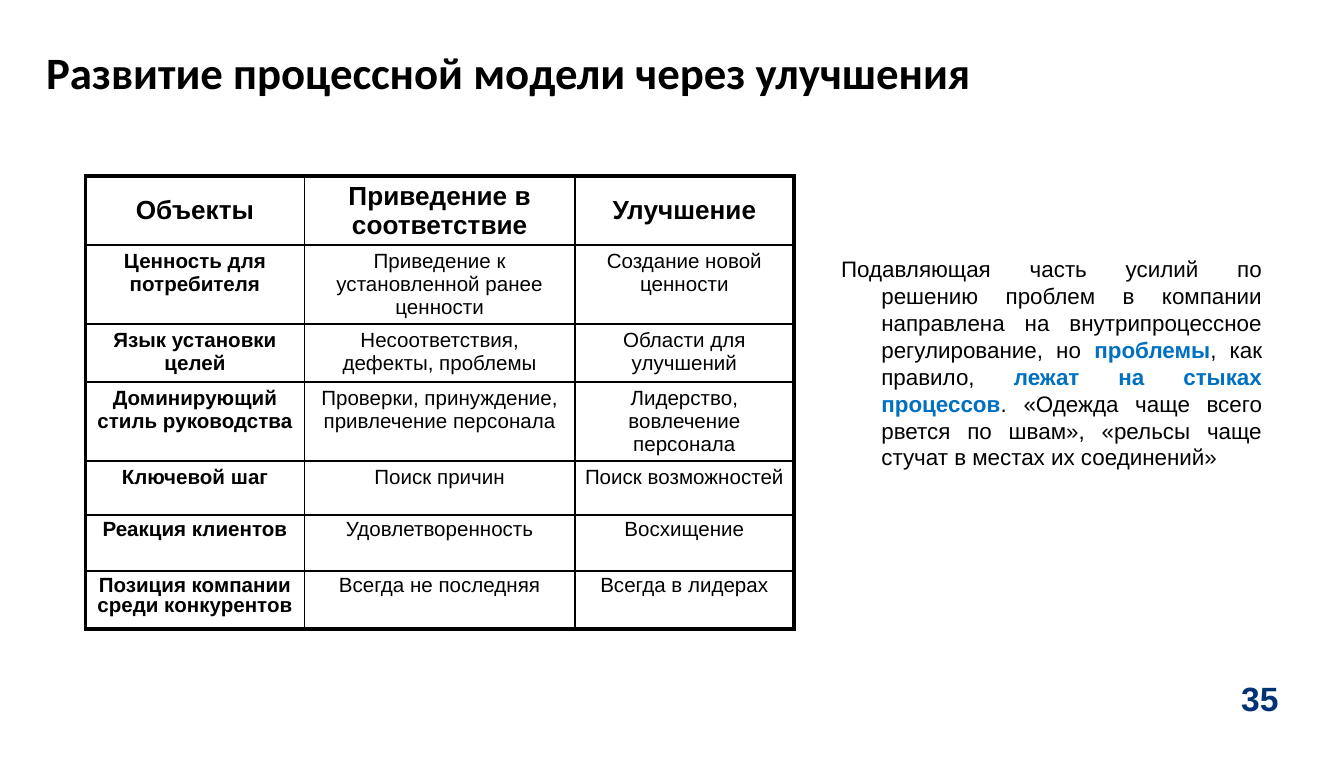
from lxml import etree
from pptx import Presentation
from pptx.dml.color import RGBColor
from pptx.enum import text as t
from pptx.oxml import ns
from pptx.util import Pt

TITLE = "Развитие процессной модели через улучшения"
ROWS = [
    ("Объекты", "Приведение в соответствие", "Улучшение"),
    ("Ценность для потребителя", "Приведение к установленной ранее ценности",
     "Создание новой ценности"),
    ("Язык установки целей", "Несоответствия, дефекты, проблемы", "Области для улучшений"),
    ("Доминирующий стиль руководства", "Проверки, принуждение, привлечение персонала",
     "Лидерство, вовлечение персонала"),
    ("Ключевой шаг", "Поиск причин", "Поиск возможностей"),
    ("Реакция клиентов", "Удовлетворенность", "Восхищение"),
    ("Позиция компании среди конкурентов", "Всегда не последняя", "Всегда в лидерах"),
]
WIDTHS = [117.3, 144.9, 117.3]
HEIGHTS = [37, 42.3, 31, 42, 29.2, 29.7, 31.3]
SPACINGS = [1, 1, 1, 1, 1, 0.9, 0.9]
COMMENT = [
    ("Подавляющая часть усилий по решению проблем в компании направлена "
     "на внутрипроцессное регулирование, но ", False),
    ("проблемы", True),
    (", как правило, ", False),
    ("лежат на стыках процессов", True),
    (". «Одежда чаще всего рвется по швам», «рельсы чаще стучат в местах их соединений»", False),
]
PAGE_NUMBER = "35"
BLACK, BLUE, NAVY = "000000", "0070C0", "003274"
THIN, THICK = 1, 2.25


def style(span, size, color=BLACK, bold=False, name="Arial"):
    font = span.font
    font.size, font.bold, font.name = Pt(size), bold, name
    font.color.rgb = RGBColor.from_string(color)


def add_borders(cell, widths):
    properties = cell._tc.get_or_add_tcPr()
    for index, (side, width) in enumerate(widths.items()):
        line = etree.Element(ns.qn(f"a:ln{side}"), w=str(Pt(width)))
        fill = etree.SubElement(line, ns.qn("a:solidFill"))
        etree.SubElement(fill, ns.qn("a:srgbClr"), val=BLACK)
        properties.insert(index, line)


def add_text_box(slide, left, top, width, height):
    box = slide.shapes.add_textbox(Pt(left), Pt(top), Pt(width), Pt(height))
    box.text_frame.word_wrap = True
    return box.text_frame.paragraphs[0]


def add_title(slide):
    title = slide.shapes.title
    title.left, title.top, title.width, title.height = Pt(17.5), Pt(23.8), Pt(525.6), Pt(37.4)
    frame = title.text_frame
    frame.text = TITLE
    frame.vertical_anchor = t.MSO_ANCHOR.TOP
    para = frame.paragraphs[0]
    para.alignment = t.PP_ALIGN.LEFT
    para.line_spacing = 0.9
    style(para.runs[0], 24, bold=True, name="Calibri")


def add_comparison(slide):
    table = slide.shapes.add_table(len(ROWS), len(WIDTHS), Pt(45.8), Pt(94.3),
                                   Pt(sum(WIDTHS)), Pt(sum(HEIGHTS))).table
    table.horz_banding = table.first_row = False
    for column, width in zip(table.columns, WIDTHS):
        column.width = Pt(width)
    last_row, last_column = len(ROWS) - 1, len(WIDTHS) - 1
    for r, labels in enumerate(ROWS):
        table.rows[r].height = Pt(HEIGHTS[r])
        for c, label in enumerate(labels):
            cell = table.cell(r, c)
            cell.text = label
            cell.fill.background()
            cell.margin_left = cell.margin_right = Pt(5.4)
            cell.margin_top = cell.margin_bottom = Pt(2.7)
            cell.vertical_anchor = t.MSO_ANCHOR.TOP if r else t.MSO_ANCHOR.MIDDLE
            para = cell.text_frame.paragraphs[0]
            para.alignment = t.PP_ALIGN.CENTER
            para.line_spacing = float(SPACINGS[r])
            style(para.runs[0], 11 if r else 14, bold=r == 0 or c == 0)
            outer = {"L": c == 0, "R": c == last_column, "T": r == 0, "B": r == last_row}
            add_borders(cell, {side: THICK if edge else THIN for side, edge in outer.items()})


def add_comment(slide):
    para = add_text_box(slide, 443.5, 133.2, 239.8, 60.5)
    para.alignment = t.PP_ALIGN.JUSTIFY
    indent = para._p.get_or_add_pPr()
    indent.set("marL", str(Pt(21.6)))
    indent.set("indent", str(Pt(-21.6)))
    for words, accent in COMMENT:
        span = para.add_run()
        span.text = words
        style(span, 12, BLUE if accent else BLACK, accent)


def add_page_number(slide):
    para = add_text_box(slide, 657.8, 359.3, 38.2, 29.5)
    para.text = PAGE_NUMBER
    style(para.runs[0], 18, NAVY, True)


def main():
    deck = Presentation()
    deck.slide_width, deck.slide_height = Pt(720), Pt(405.36)
    slide = deck.slides.add_slide(deck.slide_layouts[5])
    add_title(slide)
    add_comparison(slide)
    add_comment(slide)
    add_page_number(slide)
    deck.save("out.pptx")


if __name__ == "__main__":
    main()
